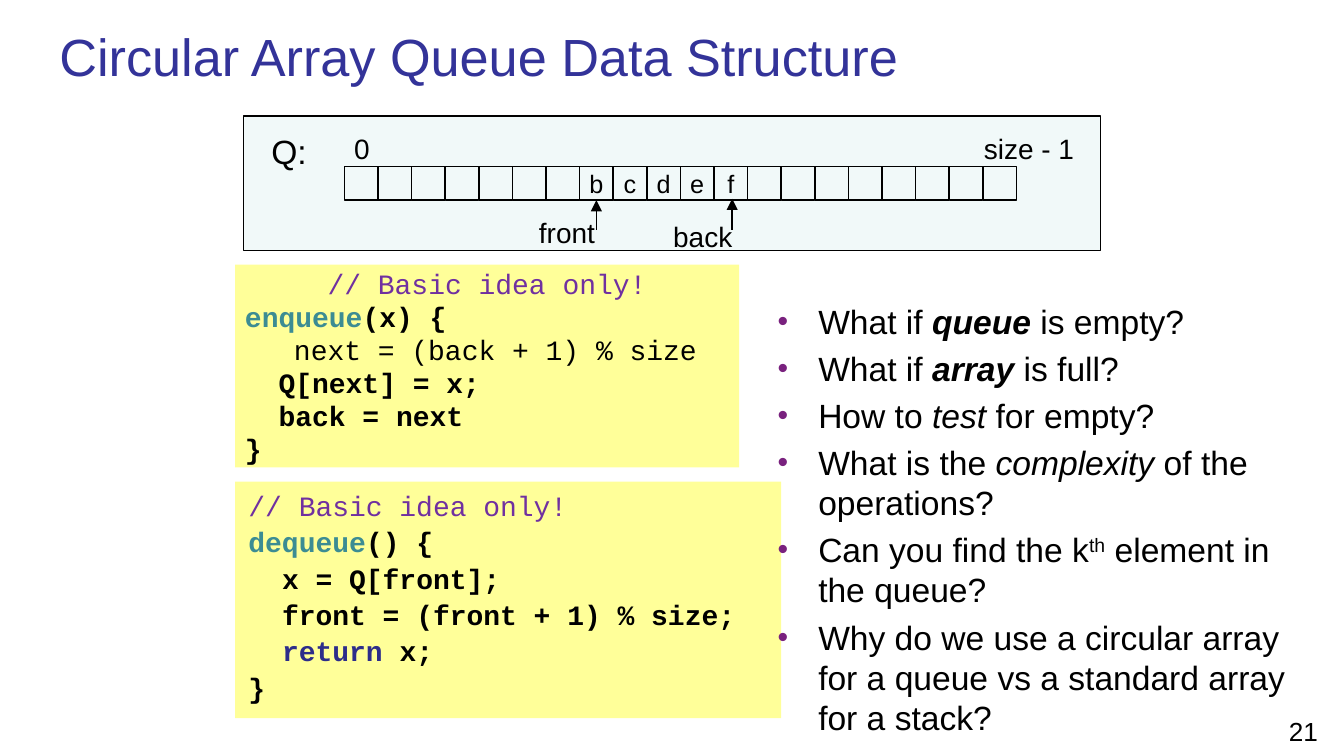
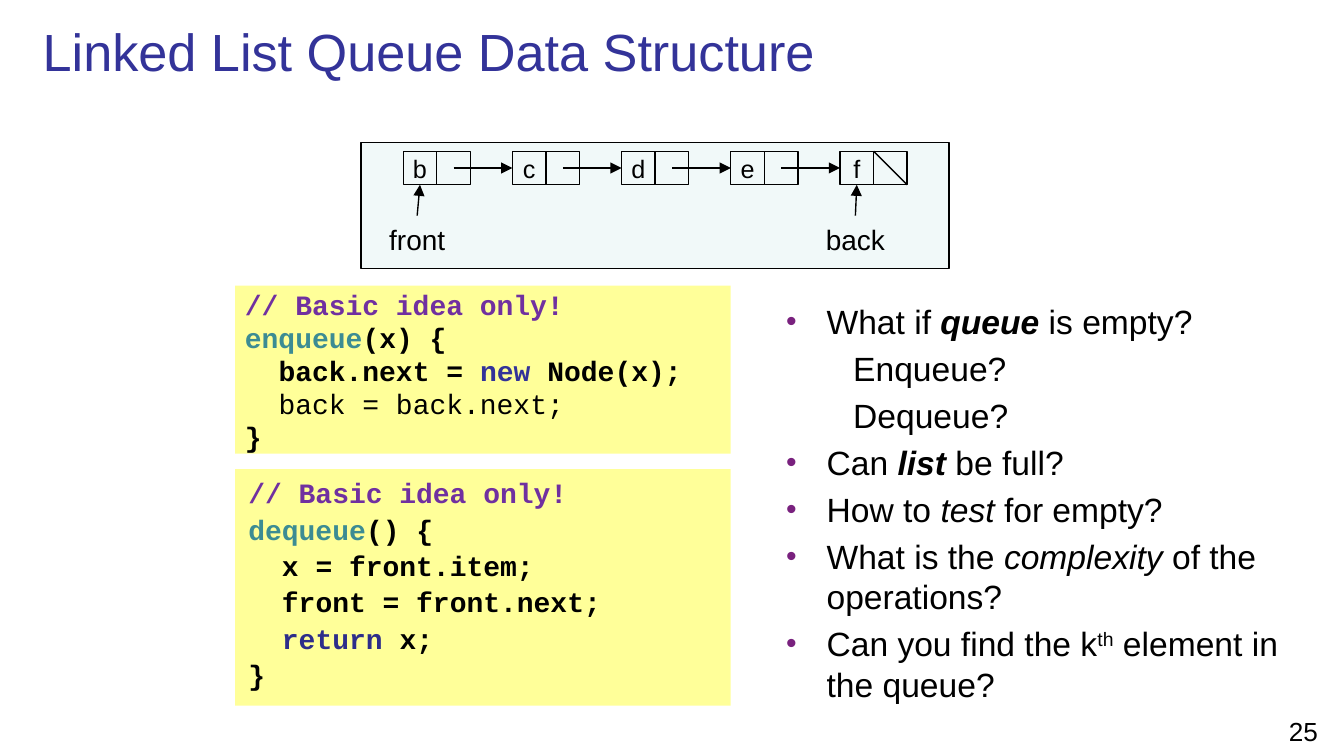
"""Build two slides comparing a circular array queue with a linked list queue."""

from typing import NamedTuple

from pptx import Presentation
from pptx.dml.color import RGBColor
from pptx.enum.shapes import MSO_CONNECTOR, MSO_SHAPE
from pptx.enum.text import MSO_ANCHOR, PP_ALIGN
from pptx.oxml.ns import qn
from pptx.util import Emu, Pt
from lxml import etree

PX = 9525
RECTANGLE = MSO_SHAPE.RECTANGLE
STRAIGHT = MSO_CONNECTOR.STRAIGHT
LEFT, CENTER = PP_ALIGN.LEFT, PP_ALIGN.CENTER
TOP, MIDDLE = MSO_ANCHOR.TOP, MSO_ANCHOR.MIDDLE
SANS, MONO = "Arial", "Courier New"
CELL = 24
CODE_LEFT = 168
INDENT = 24

COLORS = {
    "title": "333399",
    "text": "000000",
    "panel": "F1F9F9",
    "code": "FFFF99",
    "comment": "7030A0",
    "function": "3C8C93",
    "new": "333399",
    "return": "2D2D8A",
    "bullet": "79217E",
}


class Box(NamedTuple):
    """A rectangle in px."""

    left: int
    top: int
    width: int
    height: int


class Piece(NamedTuple):
    """A stretch of text in one style."""

    text: str
    color: str = "text"
    bold: bool = False
    italic: bool = False
    raised: bool = False


class Line(NamedTuple):
    """A paragraph of pieces with its left margin in px."""

    pieces: list[Piece]
    left: int = 0
    align: PP_ALIGN = LEFT
    bullet: bool = False


class Typeface(NamedTuple):
    """The font and paragraph spacing of a text block."""

    name: str
    size: float
    before: float = 0
    spacing: float = 1.0


class Label(NamedTuple):
    """A short caption on a diagram."""

    text: str
    box: Box
    size: float = 15


class Arrow(NamedTuple):
    """A line between two points in px."""

    x1: int
    y1: int
    x2: int
    y2: int


TITLE = Typeface(SANS, 28)
NUMBER = Typeface(SANS, 14)
CELL_TEXT = Typeface(SANS, 13.5)
QUESTION = Typeface(SANS, 18, before=3.6)
CODE = Typeface(MONO, 15, before=1.5)
TIGHT_CODE = Typeface(MONO, 15, before=1.5, spacing=0.9)


def rgb(name: str) -> RGBColor:
    """Look up a named colour."""
    return RGBColor.from_string(COLORS[name])


def emu(box: Box | Arrow) -> list[Emu]:
    """Turn px lengths into EMU."""
    return [Emu(length * PX) for length in box]


def add_bullet(properties) -> None:
    """Give a paragraph a hanging round bullet."""
    properties.set("indent", str(-29 * PX))
    color = etree.SubElement(properties, qn("a:buClr"))
    etree.SubElement(color, qn("a:srgbClr"), val=COLORS["bullet"])
    etree.SubElement(properties, qn("a:buSzPct"), val="90000")
    etree.SubElement(properties, qn("a:buFont"), typeface=SANS)
    etree.SubElement(properties, qn("a:buChar"), char="•")


def write(frame, lines: list[Line], face: Typeface, anchor=TOP, wrap: bool = True) -> None:
    """Fill a text frame with formatted lines."""
    frame.word_wrap = wrap
    frame.vertical_anchor = anchor
    for index, line in enumerate(lines):
        paragraph = frame.add_paragraph() if index else frame.paragraphs[0]
        paragraph.alignment = line.align
        paragraph.space_before = Pt(face.before)
        paragraph.line_spacing = face.spacing
        properties = paragraph._p.get_or_add_pPr()
        properties.set("marL", str(line.left * PX))
        if line.bullet:
            add_bullet(properties)
        for piece in line.pieces:
            run = paragraph.add_run()
            run.text = piece.text
            run.font.name = face.name
            run.font.size = Pt(face.size)
            run.font.bold = piece.bold
            run.font.italic = piece.italic
            run.font.color.rgb = rgb(piece.color)
            if piece.raised:
                run._r.get_or_add_rPr().set("baseline", "30000")


def add_text(shapes, box: Box, lines: list[Line], face: Typeface, anchor=TOP, wrap: bool = True) -> None:
    """Add a text box."""
    write(shapes.add_textbox(*emu(box)).text_frame, lines, face, anchor, wrap)


def add_rectangle(shapes, box: Box, fill: str = "", outlined: bool = True):
    """Add a rectangle with an optional fill and outline."""
    shape = shapes.add_shape(RECTANGLE, *emu(box))
    shape.shadow.inherit = False
    if fill:
        shape.fill.solid()
        shape.fill.fore_color.rgb = rgb(fill)
    else:
        shape.fill.background()
    if outlined:
        shape.line.color.rgb = rgb("text")
        shape.line.width = Pt(0.75)
    else:
        shape.line.fill.background()
    return shape


def add_cell(shapes, left: int, top: int, letter: str = "") -> None:
    """Add one square cell with its letter."""
    shape = add_rectangle(shapes, Box(left, top, CELL, CELL))
    if letter:
        write(shape.text_frame, [Line([Piece(letter)], align=CENTER)], CELL_TEXT, MIDDLE, False)


def add_line(shapes, arrow: Arrow, head: bool = True) -> None:
    """Add a straight line, with an arrowhead at its end if wanted."""
    connector = shapes.add_connector(STRAIGHT, *emu(arrow))
    connector.line.color.rgb = rgb("text")
    connector.line.width = Pt(0.75)
    properties = connector.element.spPr
    if head:
        etree.SubElement(properties.find(qn("a:ln")), qn("a:tailEnd"), type="triangle")
    etree.SubElement(properties, qn("a:effectLst"))


def add_diagram(slide, panel: Box, labels: list[Label], arrows: list[Arrow]):
    """Add a grouped panel with captions and arrows, and return its shapes."""
    shapes = slide.shapes.add_group_shape().shapes
    add_rectangle(shapes, panel, "panel")
    for label in labels:
        line = Line([Piece(label.text)], align=CENTER)
        add_text(shapes, label.box, [line], Typeface(SANS, label.size), wrap=False)
    for arrow in arrows:
        add_line(shapes, arrow)
    return shapes


def add_code(slide, box: Box, lines: list[Line], face: Typeface) -> None:
    """Add a yellow code block."""
    frame = add_rectangle(slide.shapes, box, "code", False).text_frame
    if face is TIGHT_CODE:
        frame.margin_left = frame.margin_right = Emu(7 * PX)
        frame.margin_top = frame.margin_bottom = Emu(4 * PX)
    write(frame, lines, face)


def start_slide(presentation, title: str, title_box: Box, number: int):
    """Add a blank slide with its title and number."""
    slide = presentation.slides.add_slide(presentation.slide_layouts[6])
    number_line = Line([Piece(str(number))], align=CENTER)
    add_text(slide.shapes, Box(902, 506, 58, 29), [number_line], NUMBER)
    add_text(slide.shapes, title_box, [Line([Piece(title, "title")])], TITLE, MIDDLE)
    return slide


def comment(bold: bool, align=LEFT) -> Line:
    """Return the opening comment of a code block."""
    return Line([Piece("// Basic idea only!", "comment", bold)], align=align)


def signature(name: str, rest: str) -> Line:
    """Return the first line of a function."""
    return Line([Piece(name, "function", True), Piece(rest, bold=True)])


def statement(text: str, left: int = INDENT, bold: bool = True, align=LEFT) -> Line:
    """Return one plain line of code."""
    return Line([Piece(text, bold=bold)], left, align)


def dequeue(statements: list[str], bold_comment: bool) -> list[Line]:
    """Return the dequeue function around its statements."""
    return [
        comment(bold_comment),
        signature("dequeue", "() {"),
        *[statement(text) for text in statements],
        Line([Piece("return", "return", True), Piece(" x;", bold=True)], INDENT),
        statement("}", 0),
    ]


def question(before: str, stressed: str = "", after: str = "", bold: bool = False) -> Line:
    """Return a bulleted question with one stressed word."""
    pieces = [Piece(before), Piece(stressed, bold=bold, italic=True), Piece(after)]
    return Line([piece for piece in pieces if piece.text], 41, bullet=True)


EMPTY_QUEUE = question("What if ", "queue", " is empty?", True)
SHARED_QUESTIONS = [
    question("How to ", "test", " for empty?"),
    question("What is the ", "complexity", " of the operations?"),
    Line([Piece("Can you find the k"), Piece("th", raised=True), Piece(" element in the queue?")], 41, bullet=True),
]


def build_array_slide(presentation) -> None:
    """Build the circular array slide."""
    slide = start_slide(presentation, "Circular Array Queue Data Structure", Box(33, -5, 786, 90), 21)
    enqueue = [
        comment(False, CENTER),
        signature("enqueue", "(x) {"),
        statement("next = (back + 1) % size", 12, False, CENTER),
        statement("Q[next] = x;"),
        statement("back = next"),
        statement("}", 0),
    ]
    add_code(slide, Box(CODE_LEFT, 189, 360, 145), enqueue, TIGHT_CODE)
    removal = dequeue(["x = Q[front];", "front = (front + 1) % size;"], False)
    add_code(slide, Box(CODE_LEFT, 344, 390, 169), removal, CODE)
    labels = [
        Label("Q:", Box(184, 89, 45, 38), 18),
        Label("0", Box(243, 89, 31, 34)),
        Label("size - 1", Box(693, 89, 84, 34)),
        Label("front", Box(375, 149, 60, 34)),
        Label("back", Box(471, 152, 62, 34)),
    ]
    arrows = [Arrow(426, 164, 426, 143), Arrow(523, 164, 523, 142)]
    shapes = add_diagram(slide, Box(174, 83, 612, 96), labels, arrows)
    for index in range(20):
        add_cell(shapes, 246 + index * CELL, 119, {7: "b", 8: "c", 9: "d", 10: "e", 11: "f"}.get(index, ""))
    questions = [
        EMPTY_QUEUE,
        question("What if ", "array", " is full?", True),
        *SHARED_QUESTIONS,
        question("Why do we use a circular array for a queue vs a standard array for a stack?"),
    ]
    add_text(slide.shapes, Box(534, 210, 407, 282), questions, QUESTION)


def build_list_slide(presentation) -> None:
    """Build the linked list slide."""
    slide = start_slide(presentation, "Linked List Queue Data Structure", Box(21, 8, 935, 57), 25)
    labels = [Label("front", Box(268, 154, 60, 34)), Label("back", Box(580, 154, 62, 34))]
    arrows = [Arrow(298, 154, 300, 132), Arrow(611, 154, 612, 132)]
    shapes = add_diagram(slide, Box(258, 102, 420, 90), labels, arrows)
    top, step = 108, 78
    for index, letter in enumerate("bcdef"):
        left = 288 + index * step
        add_cell(shapes, left, top, letter)
        add_cell(shapes, left + CELL, top)
        if letter == "f":
            add_line(shapes, Arrow(left + CELL, top, left + 2 * CELL, top + CELL), False)
        else:
            add_line(shapes, Arrow(left + 36, top + 12, left + step, top + 12))
    creation = [Piece("back.next = ", bold=True), Piece("new", "new", True), Piece(" Node(x);", bold=True)]
    enqueue = [
        comment(True),
        signature("enqueue", "(x) {"),
        Line(creation, INDENT),
        statement("back = back.next;", bold=False),
        statement("}", 0),
    ]
    add_code(slide, Box(CODE_LEFT, 204, 354, 120), enqueue, TIGHT_CODE)
    removal = dequeue(["x = front.item;", "front = front.next;"], True)
    add_code(slide, Box(CODE_LEFT, 335, 354, 169), removal, CODE)
    cases = [Line([Piece(text)], 60) for text in ("Enqueue?", "Dequeue?")]
    questions = [EMPTY_QUEUE, *cases, question("Can ", "list", " be full?", True), *SHARED_QUESTIONS]
    add_text(slide.shapes, Box(540, 210, 396, 282), questions, QUESTION)


def main() -> None:
    """Build and save the presentation."""
    presentation = Presentation()
    presentation.slide_width = Emu(960 * PX)
    presentation.slide_height = Emu(540 * PX)
    build_array_slide(presentation)
    build_list_slide(presentation)
    presentation.save("out.pptx")


if __name__ == "__main__":
    main()
